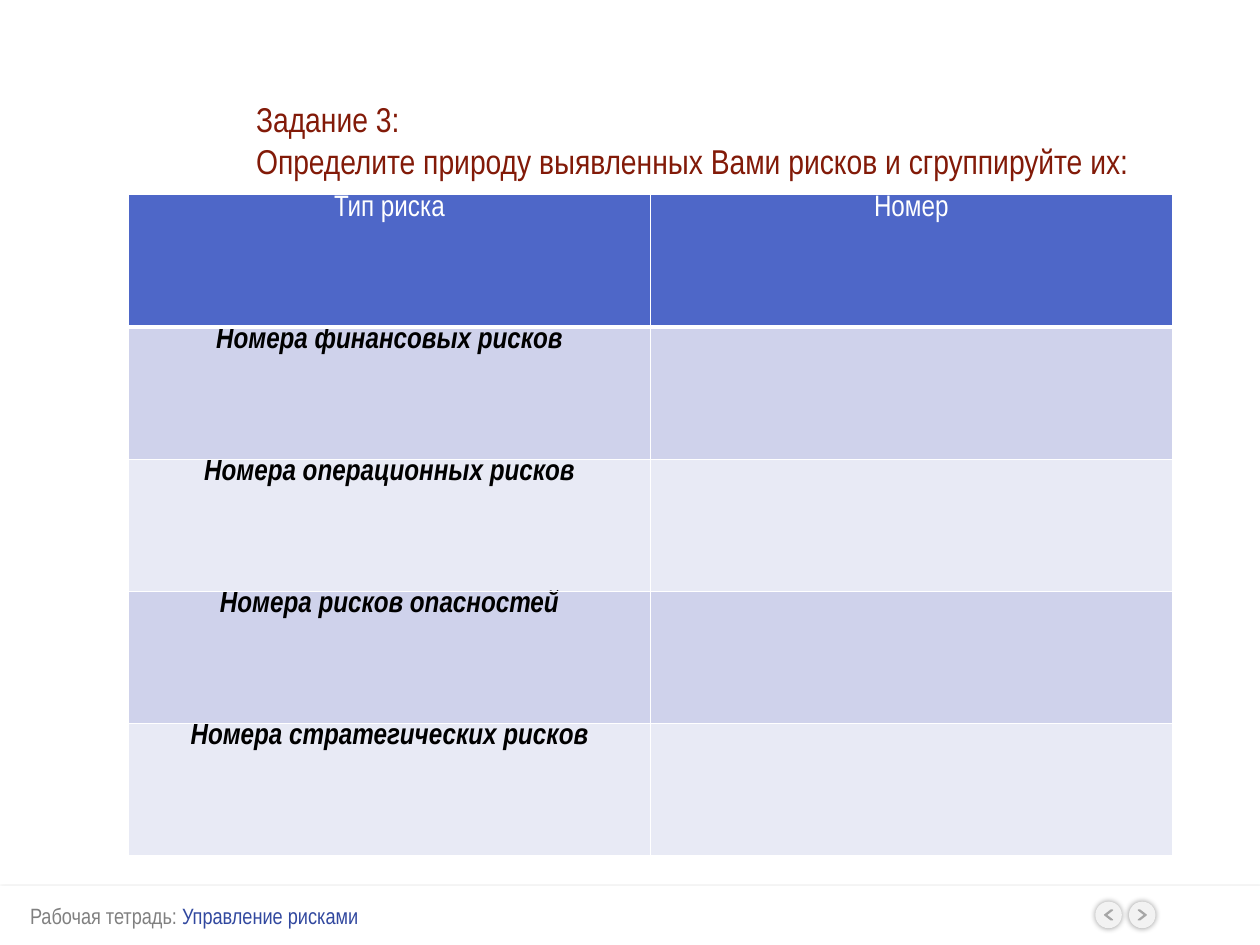
from lxml.etree import SubElement
from pptx import Presentation
from pptx.dml.color import RGBColor
from pptx.enum.shapes import MSO_SHAPE
from pptx.enum.text import MSO_ANCHOR, PP_ALIGN
from pptx.oxml.ns import qn
from pptx.util import Inches, Pt

WIDTH, HEIGHT = 14.22, 10.67
FONT = "Arial Narrow"
WHITE = RGBColor(0xFF, 0xFF, 0xFF)
BLACK = RGBColor(0, 0, 0)
GREY = RGBColor(0x80, 0x80, 0x80)
NAVY = RGBColor(0x31, 0x48, 0x9F)
BROWN = RGBColor(0x82, 0x1A, 0x08)
HEADER_BLUE = RGBColor(0x4E, 0x67, 0xC8)
BANDS = (RGBColor(0xCF, 0xD2, 0xEB), RGBColor(0xE8, 0xEA, 0xF5))
BUTTON_GREY = RGBColor(0xF2, 0xF2, 0xF2)
ARROW_GREY = RGBColor(0xA6, 0xA6, 0xA6)

TITLE = ("Задание 3:",
         "Определите природу выявленных Вами рисков и сгруппируйте их:")
RISK_ROWS = (
    ("Тип риска", "Номер"),
    ("Номера финансовых рисков", ""),
    ("Номера операционных рисков", ""),
    ("Номера рисков опасностей", ""),
    ("Номера стратегических рисков", ""),
)


def add_run(paragraph, text, **format_values):
    run = paragraph.add_run()
    run.text = text
    color = format_values.pop("color")
    for name, value in {"name": FONT, **format_values}.items():
        setattr(run.font, name, value)
    run.font.color.rgb = color


def add_plain_shape(slide, preset, box, fill=None):
    shape = slide.shapes.add_shape(preset, *map(Inches, box))
    shape.shadow.inherit = False
    shape.line.fill.background()
    if fill is None:
        shape.fill.background()
    else:
        shape.fill.solid()
        shape.fill.fore_color.rgb = fill
    return shape


def add_shadow(shape, opacity, blur, distance=0, angle=0):
    """Give the shape a black outer shadow; opacity in percent, angle in degrees."""
    effects = shape._element.spPr.find(qn("a:effectLst"))
    shadow = SubElement(effects, qn("a:outerShdw"), blurRad=str(Pt(blur)),
                        dist=str(Pt(distance)), dir=str(angle * 60000),
                        algn="ctr", rotWithShape="0")
    color = SubElement(shadow, qn("a:srgbClr"), val=str(BLACK))
    SubElement(color, qn("a:alpha"), val=str(opacity * 1000))


def add_text_frame(slide, box, wrap):
    frame = slide.shapes.add_textbox(*map(Inches, box)).text_frame
    frame.word_wrap = wrap
    for side in ("left", "top", "right", "bottom"):
        setattr(frame, f"margin_{side}", Inches(0.07))
    return frame


def add_title(slide, box):
    frame = add_text_frame(slide, box, True)
    for index, line in enumerate(TITLE):
        paragraph = frame.add_paragraph() if index else frame.paragraphs[0]
        add_run(paragraph, line, size=Pt(28), color=BROWN)


def add_cell_borders(cell, widths):
    properties = cell._tc.get_or_add_tcPr()
    for side, width in widths.items():
        line = SubElement(properties, qn(f"a:ln{side}"), w=str(Pt(width)))
        fill = SubElement(line, qn("a:solidFill"))
        SubElement(fill, qn("a:srgbClr"), val=str(WHITE))


def add_risk_table(slide, box):
    left, top, width, height = map(Inches, box)
    row_count, column_count = len(RISK_ROWS), len(RISK_ROWS[0])
    table = slide.shapes.add_table(row_count, column_count,
                                   left, top, width, height).table
    for column in table.columns:
        column.width = width // column_count
    for row_index, row in enumerate(RISK_ROWS):
        table.rows[row_index].height = height // row_count
        is_header = row_index == 0
        for column_index, label in enumerate(row):
            cell = table.cell(row_index, column_index)
            add_cell_borders(cell, {"L": 1, "R": 1,
                                    "T": 3 if row_index == 1 else 1,
                                    "B": 3 if is_header else 1})
            cell.fill.solid()
            cell.fill.fore_color.rgb = (
                HEADER_BLUE if is_header else BANDS[(row_index - 1) % 2])
            layout = {"margin_left": Inches(0.05), "margin_right": Inches(0.05),
                      "margin_top": 0, "margin_bottom": 0,
                      "vertical_anchor": MSO_ANCHOR.TOP}
            for name, value in layout.items():
                setattr(cell, name, value)
            if label:
                paragraph = cell.text_frame.paragraphs[0]
                paragraph.alignment = PP_ALIGN.CENTER
                add_run(paragraph, label, size=Pt(24), bold=not is_header,
                        italic=not is_header,
                        color=WHITE if is_header else BLACK)


def add_page_button(slide, box, rotation):
    left, top, width, height = box
    circle = add_plain_shape(slide, MSO_SHAPE.OVAL, box, BUTTON_GREY)
    add_shadow(circle, 40, 5)
    arrow_width, arrow_height = 0.3 * width, 0.37 * height
    arrow = add_plain_shape(slide, MSO_SHAPE.CHEVRON,
                            (left + (width - arrow_width) / 2,
                             top + (height - arrow_height) / 2,
                             arrow_width, arrow_height))
    arrow.adjustments[0] = 0.79
    arrow.rotation = rotation
    arrow.line.color.rgb = ARROW_GREY
    arrow.line.width = Pt(1)


def add_footer(slide, box):
    left, top, width, height = box
    strip = add_plain_shape(slide, MSO_SHAPE.RECTANGLE, box, WHITE)
    add_shadow(strip, 35, 3, 1.8, 90)
    for offset, rotation in ((0, 180), (0.38, 0)):
        add_page_button(slide, (left + 0.87 * width + offset - 0.01,
                                top + 0.27 * height, 0.3, 0.3), rotation)
    frame = add_text_frame(slide, (left + 0.27, top + 0.12, 3.9, 0.43), False)
    for text, color in (("Рабочая тетрадь: ", GREY),
                        ("Управление рисками", NAVY)):
        add_run(frame.paragraphs[0], text, size=Pt(18), color=color)


def main():
    presentation = Presentation()
    presentation.slide_width = Inches(WIDTH)
    presentation.slide_height = Inches(HEIGHT)
    slide = presentation.slides.add_slide(presentation.slide_layouts[6])
    add_footer(slide, (0, 10, WIDTH, HEIGHT - 10))
    add_title(slide, (2.82, 1.04, 10.53, 1.03))
    add_risk_table(slide, (1.45, 2.2, 11.78, 7.46))
    presentation.save("out.pptx")


if __name__ == "__main__":
    main()
